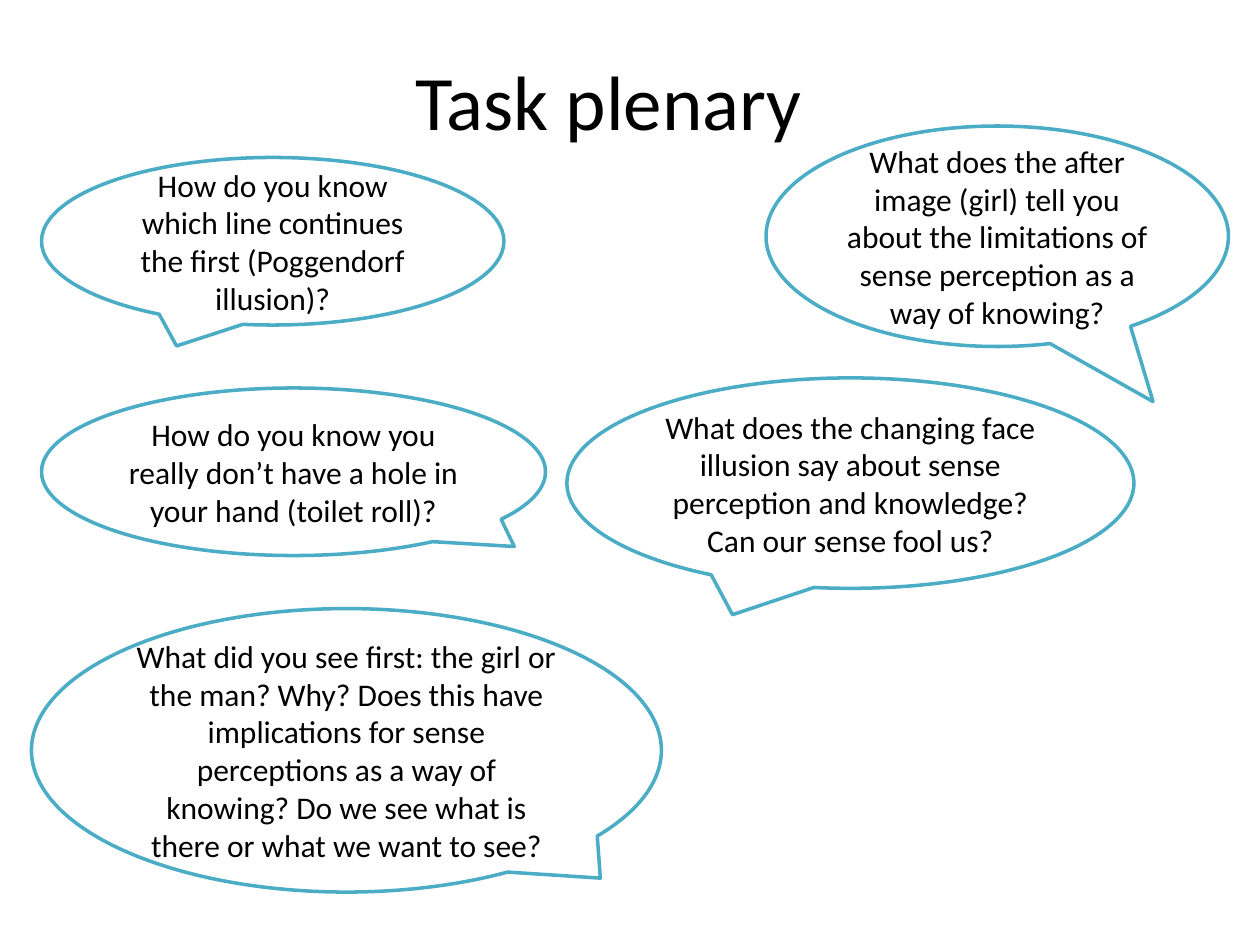
from dataclasses import dataclass

import pptx
import pptx.dml.color
import pptx.enum.shapes
import pptx.enum.text
import pptx.util

Inches = pptx.util.Inches
RGBColor = pptx.dml.color.RGBColor


@dataclass(frozen=True)
class Theme:
    font: str = "Calibri"
    title_size: int = 44
    body_size: int = 18
    line_width: int = 2
    text: RGBColor = RGBColor(0x00, 0x00, 0x00)
    background: RGBColor = RGBColor(0xFF, 0xFF, 0xFF)
    outline: RGBColor = RGBColor(0x4B, 0xAC, 0xC6)


@dataclass(frozen=True)
class Bubble:
    """Speech bubble; the tail tip is an offset from the centre in widths and heights."""
    left: float
    top: float
    width: float
    height: float
    question: str
    tail: tuple[float, float] = (-0.208, 0.625)


THEME = Theme()
TITLE_LAYOUT = 5

BUBBLES = [
    Bubble(0.33, 1.25, 3.67, 1.33,
           "How do you know which line continues the first (Poggendorf illusion)?"),
    Bubble(6.08, 1, 3.67, 1.75,
           "What does the after image (girl) tell you about the limitations of "
           "sense perception as a way of knowing?", tail=(0.337, 0.75)),
    Bubble(0.33, 3.08, 4, 1.33,
           "How do you know you really don’t have a hole in your hand (toilet roll)?",
           tail=(0.438, 0.446)),
    Bubble(4.5, 3, 4.5, 1.67,
           "What does the changing face illusion say about sense perception and "
           "knowledge? Can our sense fool us?"),
    Bubble(0.25, 4.83, 5, 2.25,
           "What did you see first: the girl or the man? Why? Does this have "
           "implications for sense perceptions as a way of knowing? Do we see what "
           "is there or what we want to see?", tail=(0.403, 0.451)),
]


def write_text(shape, text: str, *, size: int, color: RGBColor = THEME.text) -> None:
    frame = shape.text_frame
    frame.word_wrap = True
    frame.vertical_anchor = pptx.enum.text.MSO_ANCHOR.MIDDLE
    paragraph = frame.paragraphs[0]
    paragraph.alignment = pptx.enum.text.PP_ALIGN.CENTER
    run = paragraph.add_run()
    run.text = text
    run.font.name = THEME.font
    run.font.size = pptx.util.Pt(size)
    run.font.color.rgb = color


def add_title(slide, text: str) -> None:
    title = slide.shapes.title
    title.left, title.top = Inches(0.33), Inches(0.17)
    title.width, title.height = Inches(9), Inches(1.25)
    write_text(title, text, size=THEME.title_size)


def add_bubble(slide, bubble: Bubble) -> None:
    shape = slide.shapes.add_shape(
        pptx.enum.shapes.MSO_SHAPE.OVAL_CALLOUT,
        Inches(bubble.left), Inches(bubble.top),
        Inches(bubble.width), Inches(bubble.height))
    shape.shadow.inherit = False
    shape.adjustments[0], shape.adjustments[1] = bubble.tail
    shape.fill.solid()
    shape.fill.fore_color.rgb = THEME.background
    shape.line.color.rgb = THEME.outline
    shape.line.width = pptx.util.Pt(THEME.line_width)
    write_text(shape, bubble.question, size=THEME.body_size)


def main() -> None:
    presentation = pptx.Presentation()
    presentation.slide_width, presentation.slide_height = Inches(10), Inches(7.5)
    slide = presentation.slides.add_slide(presentation.slide_layouts[TITLE_LAYOUT])
    add_title(slide, "Task plenary")
    for bubble in BUBBLES:
        add_bubble(slide, bubble)
    presentation.save("out.pptx")


if __name__ == "__main__":
    main()
